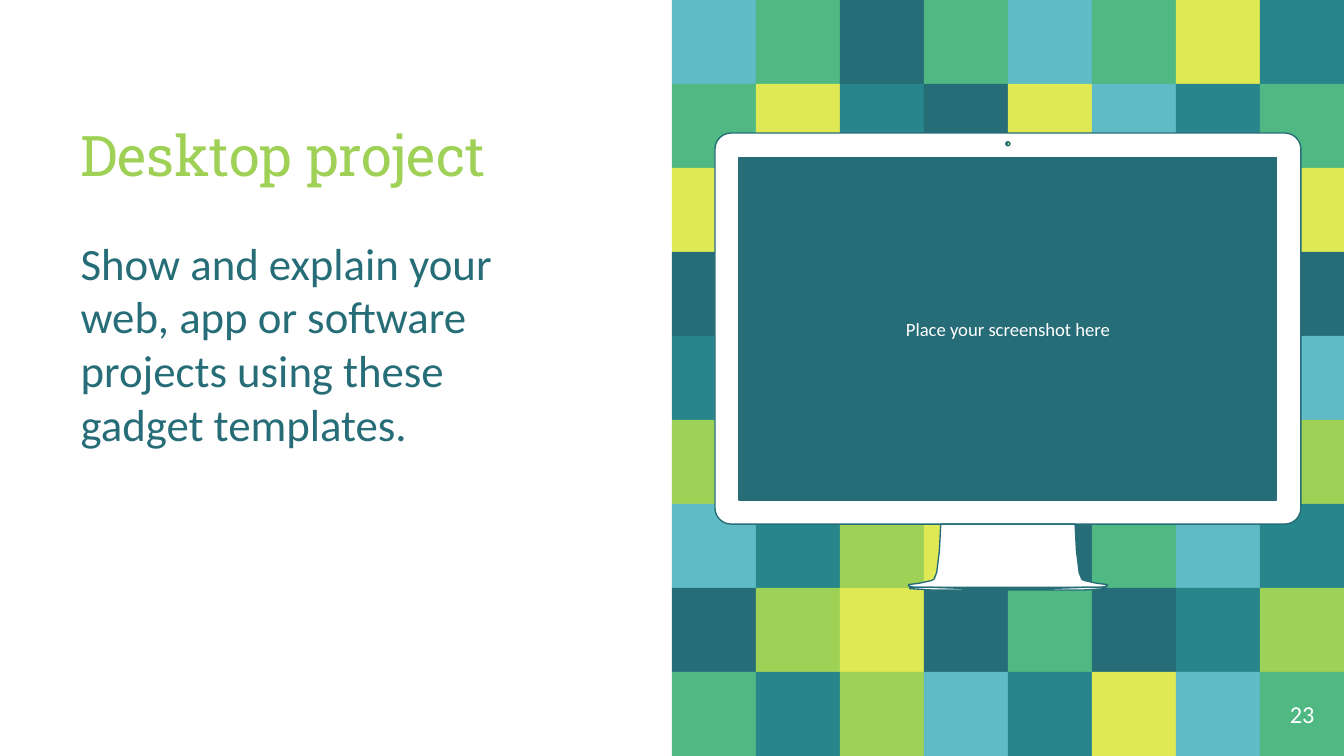
import math

import pptx
import pptx.dml.color
import pptx.enum.shapes
import pptx.enum.text
import pptx.oxml.ns
import pptx.util
from pptx.util import Inches

RGBColor = pptx.dml.color.RGBColor
Align = pptx.enum.text.PP_ALIGN
Anchor = pptx.enum.text.MSO_ANCHOR

WHITE = RGBColor(0xFF, 0xFF, 0xFF)
LIME = RGBColor(0x9E, 0xD1, 0x55)
DARK = RGBColor(0x26, 0x6D, 0x78)
YELLOW = RGBColor(0xDF, 0xE9, 0x54)
GREEN = RGBColor(0x50, 0xB8, 0x83)
TEAL = RGBColor(0x27, 0x86, 0x8B)
SKY = RGBColor(0x5F, 0xBB, 0xC5)

TILE_COLORS = {"L": LIME, "D": DARK, "Y": YELLOW, "G": GREEN, "T": TEAL, "S": SKY}
# One letter for each tile; a dot leaves the place empty.
MOSAIC = [
    "SGDGSGYT",
    "GYTDYSTG",
    "Y......Y",
    "D......D",
    "T......S",
    "LSDLTLGL",
    "STLYDGST",
    "DLYDGDTL",
    "GTLSTYSG",
]
TILE = 0.625


def add_rectangle(page, box, color):
    kind = pptx.enum.shapes.MSO_SHAPE.RECTANGLE
    rectangle = page.shapes.add_shape(kind, *map(Inches, box))
    rectangle.shadow.inherit = False
    rectangle.fill.solid()
    rectangle.fill.fore_color.rgb = color
    rectangle.line.fill.background()
    return rectangle


def write_text(shape, text, font, size, color, align=Align.LEFT,
               anchor=Anchor.TOP, space_before=0):
    frame = shape.text_frame
    frame.text = text
    para = frame.paragraphs[0]
    span = para.runs[0]
    margins = dict.fromkeys(
        ["margin_left", "margin_top", "margin_right", "margin_bottom"], Inches(0.1))
    formats = [
        (frame, {"word_wrap": True, "vertical_anchor": anchor,
                 "auto_size": pptx.enum.text.MSO_AUTO_SIZE.NONE, **margins}),
        (para, {"alignment": align, "space_before": pptx.util.Pt(space_before)}),
        (span.font, {"name": font, "size": pptx.util.Pt(size)}),
    ]
    for target, values in formats:
        for name, value in values.items():
            setattr(target, name, value)
    span.font.color.rgb = color


def place(shape, box):
    for name, value in zip(["left", "top", "width", "height"], box):
        setattr(shape, name, Inches(value))


def add_mosaic(page, left, top):
    for row, letters in enumerate(MOSAIC):
        for column, letter in enumerate(letters):
            if letter in TILE_COLORS:
                box = (left + column * TILE, top + row * TILE, TILE, TILE)
                add_rectangle(page, box, TILE_COLORS[letter])


def arc(x, y, radius, start, end, steps):
    """Points on a circle, with angles in degrees running clockwise."""
    angles = [math.radians(start + (end - start) * i / steps) for i in range(steps + 1)]
    return [(x + radius * math.cos(a), y + radius * math.sin(a)) for a in angles]


def mirrored(half):
    """Close a right-hand outline with its reflection about x = 0."""
    return half + [(-x, y) for x, y in reversed(half)]


def add_monitor(page, left, top, width):
    """Draw the desktop computer; outlines are measured from its top centre."""
    center = left + width / 2
    half, radius, body_height = width / 2, 0.12, 2.91
    screen_top, screen_half, screen_height = 0.18, 2, 2.55
    screen_bottom = screen_top + screen_height

    camera = arc(0, 0.08, 0.015, 0, 360, 12)
    screen = mirrored([(screen_half, screen_top), (screen_half, screen_bottom)])
    body = mirrored(
        arc(half - radius, radius, radius, -90, 0, 6)
        + arc(half - radius, body_height - radius, radius, 0, 90, 6))
    stand = mirrored([
        (0.5, 2.91), (0.51, 3.11), (0.53, 3.27), (0.55, 3.32), (0.57, 3.33),
        (0.66, 3.35), (0.74, 3.36), (0.74, 3.37), (0.7, 3.38), (0.47, 3.38)])
    foot = mirrored([
        (0.28, 3.39), (0.59, 3.38), (0.73, 3.38), (0.73, 3.39),
        (0.57, 3.4), (0.27, 3.4)])

    builder = None
    for outline in [camera, screen, body, stand, foot]:
        points = [(Inches(center + x), Inches(top + y)) for x, y in outline]
        if builder is None:
            builder = page.shapes.build_freeform(*points[0], scale=1.0)
        else:
            builder.move_to(*points[0])
        builder.add_line_segments(points[1:], close=True)
    monitor = builder.convert_to_shape()
    monitor.shadow.inherit = False
    monitor.fill.solid()
    monitor.fill.fore_color.rgb = WHITE
    monitor.line.color.rgb = DARK
    monitor.line.width = pptx.util.Pt(0.75)

    box = (center - screen_half, top + screen_top, 2 * screen_half, screen_height)
    write_text(add_rectangle(page, box, DARK), "Place your screenshot here",
               "Calibri", 10, WHITE, Align.CENTER, Anchor.MIDDLE)


def add_message(page, left, top, width):
    title, body = page.shapes.title, page.placeholders[1]
    place(title, (left, top, width, 0.94))
    write_text(title, "Desktop project", "Roboto Slab", 30, LIME, anchor=Anchor.BOTTOM)
    place(body, (left, top + 1.09, width, 3.57))
    write_text(
        body,
        "Show and explain your web, app or software projects using these gadget templates.",
        "Calibri", 24, DARK, space_before=6)
    settings = body.text_frame.paragraphs[0]._p.get_or_add_pPr()
    settings.set("marL", "0")
    settings.set("indent", "0")
    settings.append(pptx.oxml.parse_xml(
        "<a:buNone %s/>" % pptx.oxml.ns.nsdecls("a")))


def add_page_number(page, left, top):
    number = page.shapes.add_textbox(*map(Inches, (left, top, TILE, TILE)))
    write_text(number, "23", "Calibri", 13, WHITE, Align.CENTER, Anchor.MIDDLE)


def main():
    deck = pptx.Presentation()
    deck.slide_width, deck.slide_height = Inches(10), Inches(9 * TILE)
    page = deck.slides.add_slide(deck.slide_layouts[1])
    add_mosaic(page, 5, 0)
    add_monitor(page, 5.32, 0.99, 4.36)
    add_message(page, 0.5, 0.56, 3.87)
    add_page_number(page, 10 - TILE, 8 * TILE)
    deck.save("out.pptx")


if __name__ == "__main__":
    main()
